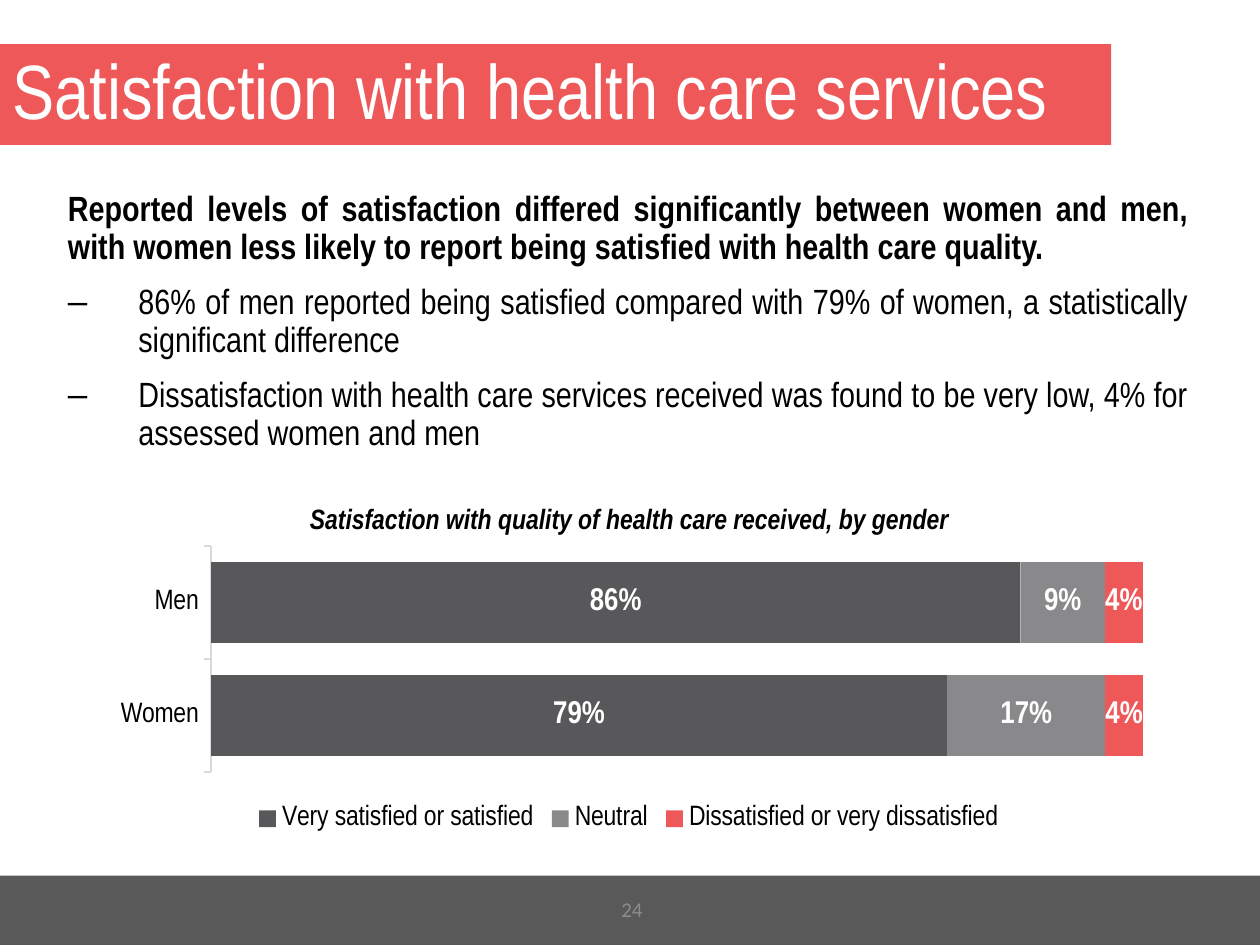
from lxml.etree import SubElement
from pptx import Presentation
from pptx.chart.data import CategoryChartData
from pptx.dml.color import RGBColor
from pptx.enum.chart import (XL_CHART_TYPE, XL_LABEL_POSITION, XL_LEGEND_POSITION,
                             XL_TICK_LABEL_POSITION, XL_TICK_MARK)
from pptx.enum.shapes import MSO_SHAPE
from pptx.enum.text import MSO_ANCHOR, PP_ALIGN
from pptx.oxml import parse_xml
from pptx.oxml.ns import nsdecls, qn
from pptx.util import Cm, Pt

RED, DARK, WHITE, BLACK = "EE5859", "58585A", "FFFFFF", "000000"
INDENT = Cm(1.42)


def color(hex_string):
    return RGBColor.from_string(hex_string)


def paint(fill, hex_string, opacity=100):
    fill.solid()
    fill.fore_color.rgb = color(hex_string)
    if opacity < 100:
        # The colour element is reached through the fill's owner by the caller
        raise ValueError("use fade for translucent series")


def fade(series, percent):
    """Make a solid series fill partly transparent."""
    srgb = series.format.fill._xPr.find(qn("a:solidFill")).find(qn("a:srgbClr"))
    SubElement(srgb, qn("a:alpha"), val=str(percent * 1000))


def set_font(font, size, hex_string=BLACK, bold=False, italic=False, name="Arial Narrow"):
    font.name, font.size = name, Pt(size)
    font.bold, font.italic = bold, italic
    font.color.rgb = color(hex_string)


def add_dash(para):
    properties = para._p.get_or_add_pPr()
    properties.set("marL", str(INDENT))
    properties.set("indent", str(-INDENT))
    SubElement(properties, qn("a:buFont"), typeface="Arial")
    SubElement(properties, qn("a:buChar"), char="–")


class SlideBuilder:
    def __init__(self, deck):
        self.page = deck.slides.add_slide(deck.slide_layouts[5])

    def band(self, left, top, width, height, fill):
        shape = self.page.shapes.add_shape(
            MSO_SHAPE.RECTANGLE, Cm(left), Cm(top), Cm(width), Cm(height))
        shape.shadow.inherit = False
        paint(shape.fill, fill)
        shape.line.fill.background()

    def title(self, text, left, top, width, height):
        title = self.page.shapes.title
        title.left, title.top, title.width, title.height = map(Cm, (left, top, width, height))
        paint(title.fill, RED)
        title.text_frame.text = text
        title.text_frame.vertical_anchor = MSO_ANCHOR.MIDDLE
        para = title.text_frame.paragraphs[0]
        para.alignment, para.line_spacing = PP_ALIGN.LEFT, 0.9
        set_font(para.font, 44, WHITE)

    def text(self, text, left, top, width, height, size, align=PP_ALIGN.CENTER,
             anchor=MSO_ANCHOR.TOP, **style):
        box = self.page.shapes.add_textbox(Cm(left), Cm(top), Cm(width), Cm(height))
        frame = box.text_frame
        frame.word_wrap, frame.vertical_anchor = True, anchor
        para = frame.paragraphs[0]
        para.text, para.alignment = text, align
        set_font(para.font, size, **style)
        return frame

    def findings(self, lead, points, left, top, width, height):
        frame = self.text(lead, left, top, width, height, 20, PP_ALIGN.JUSTIFY, bold=True)
        frame.paragraphs[0].line_spacing = 0.9
        for point in points:
            para = frame.add_paragraph()
            para.text, para.alignment = point, PP_ALIGN.JUSTIFY
            para.line_spacing, para.space_before = 0.9, Pt(10)
            add_dash(para)
            set_font(para.font, 20)

    def stacked_bars(self, categories, series, left, top, width, height, plot_box):
        """Series are (name, values, colour, opacity in percent)."""
        data = CategoryChartData(number_format="0%")
        data.categories = categories
        for name, values, *_ in series:
            data.add_series(name, values)
        chart = self.page.shapes.add_chart(
            XL_CHART_TYPE.BAR_STACKED_100, Cm(left), Cm(top), Cm(width), Cm(height), data).chart
        set_font(chart.font, 16)
        chart.has_title = False
        chart.has_legend = True
        chart.legend.position = XL_LEGEND_POSITION.BOTTOM
        chart.legend.include_in_layout = False
        set_font(chart.legend.font, 16)

        plot = chart.plots[0]
        plot.gap_width, plot.overlap, plot.vary_by_categories = 40, 100, False
        for bars, (_, _, fill, opacity) in zip(plot.series, series):
            paint(bars.format.fill, fill)
            if opacity < 100:
                fade(bars, opacity)
            labels = bars.data_labels
            labels.show_value = True
            labels.position = XL_LABEL_POSITION.CENTER
            labels.number_format, labels.number_format_is_linked = "0%", False
            set_font(labels.font, 18, WHITE, bold=True)

        axis = chart.category_axis
        axis.major_tick_mark = XL_TICK_MARK.OUTSIDE
        axis.tick_label_position = XL_TICK_LABEL_POSITION.LOW
        axis.format.line.color.rgb = color("D9D9D9")
        axis.format.line.width = Pt(0.75)
        set_font(axis.tick_labels.font, 16)
        chart.value_axis.visible = False
        chart.value_axis.has_major_gridlines = False
        chart.value_axis.maximum_scale = 1
        self.place_plot(chart, plot_box)

    def place_plot(self, chart, plot_box):
        """Fix the inner plot area at x, y, w, h as fractions of the chart."""
        area = chart._chartSpace.chart.plotArea
        for old in area.findall(qn("c:layout")):
            area.remove(old)
        sizes = "".join(f'<c:{key} val="{value}"/>' for key, value in zip("xywh", plot_box))
        area.insert(0, parse_xml(
            f'<c:layout {nsdecls("c")}><c:manualLayout><c:layoutTarget val="inner"/>'
            f'<c:xMode val="edge"/><c:yMode val="edge"/>{sizes}'
            '</c:manualLayout></c:layout>'))


def main():
    deck = Presentation()
    deck.slide_width, deck.slide_height = Cm(25.4), Cm(19.05)
    slide = SlideBuilder(deck)
    slide.band(0, 17.65, 25.4, 1.4, "595959")
    slide.title("Satisfaction with health care services", 0, 0.89, 22.4, 2.03)
    slide.findings(
        "Reported levels of satisfaction differed significantly between women and men, "
        "with women less likely to report being satisfied with health care quality.",
        ["86% of men reported being satisfied compared with 79% of women, "
         "a statistically significant difference",
         "Dissatisfaction with health care services received was found to be very low, "
         "4% for assessed women and men"],
        1.12, 3.73, 23.09, 6.73)
    slide.stacked_bars(
        ["Women", "Men"],
        [("Very satisfied or satisfied", (0.79, 0.86), DARK, 100),
         ("Neutral", (0.17, 0.09), DARK, 70),
         ("Dissatisfied or very dissatisfied", (0.04, 0.04), RED, 100)],
        1.88, 10.95, 21.59, 5.92, plot_box=(0.11, 0.01, 0.87, 0.77))
    slide.text("Satisfaction with quality of health care received, by gender",
               4.88, 9.98, 15.62, 0.94, 16, bold=True, italic=True)
    slide.text("24", 9.88, 17.81, 5.72, 1.02, 12, anchor=MSO_ANCHOR.MIDDLE,
               hex_string="8C8C8C", name="Calibri")
    deck.save("out.pptx")


if __name__ == "__main__":
    main()
